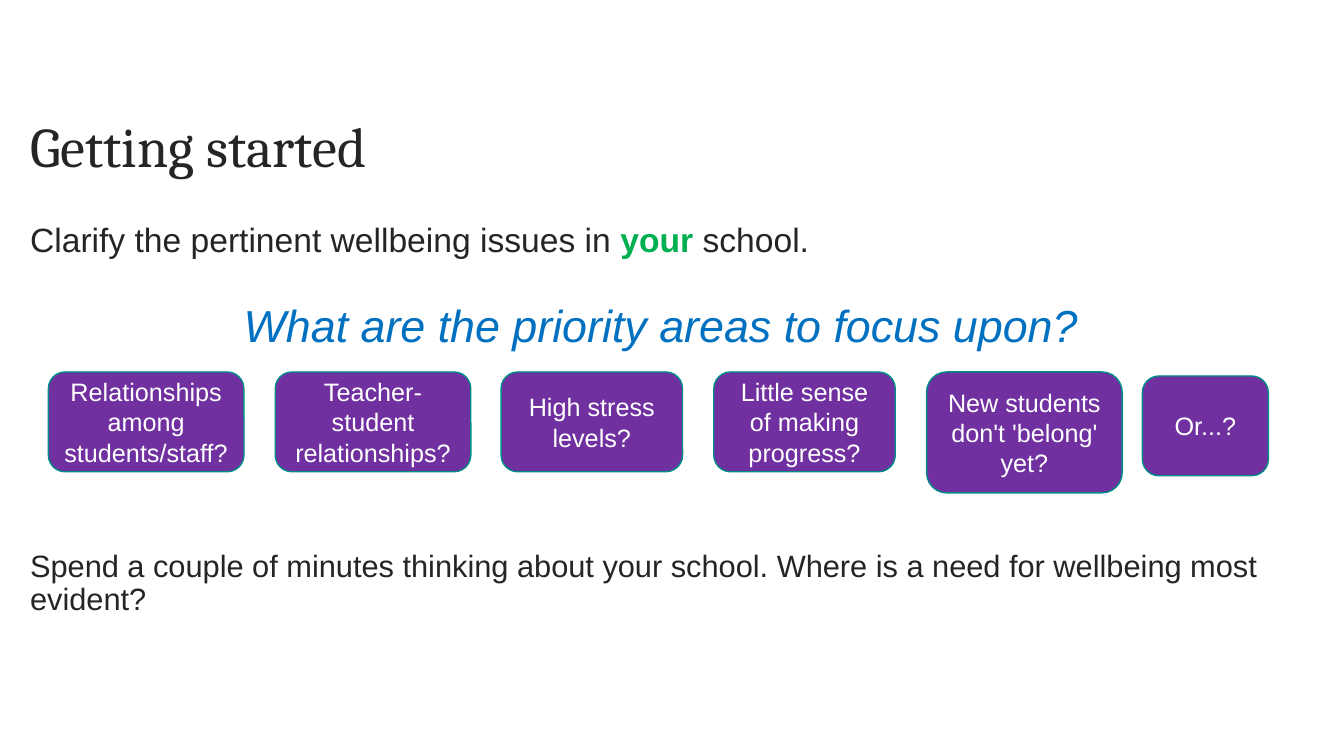
from pptx import Presentation
from pptx.dml.color import RGBColor
from pptx.enum.shapes import MSO_SHAPE
from pptx.enum.text import MSO_ANCHOR, PP_ALIGN
from pptx.util import Inches, Pt


def color(value):
    return RGBColor.from_string(value)


def set_font(font, size, value, name="Arial"):
    font.name = name
    font.size = Pt(size)
    font.color.rgb = color(value)


presentation = Presentation()
presentation.slide_width = Inches(13.33)
presentation.slide_height = Inches(7.5)
slide = presentation.slides.add_slide(presentation.slide_layouts[5])

# Title
title = slide.shapes.title
title.left, title.top = Inches(0.2), Inches(1.09)
title.width, title.height = Inches(12.72), Inches(0.79)
title.text_frame.text = "Getting started"
title.text_frame.vertical_anchor = MSO_ANCHOR.MIDDLE
paragraph = title.text_frame.paragraphs[0]
paragraph.alignment = PP_ALIGN.LEFT
paragraph.line_spacing = 0.9
set_font(paragraph.font, 40, "252525", "Cambria")

# Body text
body = slide.shapes.add_textbox(Inches(0.2), Inches(2.17), Inches(12.72), Inches(5.27))
frame = body.text_frame
frame.word_wrap = True

issues = frame.paragraphs[0]
issues.line_spacing = 0.9
set_font(issues.font, 24, "252525")
issues.add_run().text = "Clarify the pertinent wellbeing issues in "
emphasis = issues.add_run()
emphasis.text = "your"
emphasis.font.bold = True
emphasis.font.color.rgb = color("00B050")
issues.add_run().text = " school."

question = frame.add_paragraph()
question.text = "What are the priority areas to focus upon?"
question.alignment = PP_ALIGN.CENTER
question.line_spacing = 0.9
question.space_before = Pt(31)
set_font(question.font, 32, "0070C0")
question.font.italic = True

task = frame.add_paragraph()
task.text = (
    "Spend a couple of minutes thinking about your school. "
    "Where is a need for wellbeing most evident?"
)
task.line_spacing = 0.9
task.space_before = Pt(142)
set_font(task.font, 22, "252525")

# Priority areas: text, left, top, width, height
areas = [
    ("Relationships among students/staff?", 0.48, 3.69, 1.94, 0.99),
    ("Teacher-student relationships?", 2.73, 3.69, 1.94, 0.99),
    ("High stress levels?", 4.97, 3.69, 1.8, 0.99),
    ("Little sense of making progress?", 7.08, 3.69, 1.8, 0.99),
    ("New students don't 'belong' yet?", 9.19, 3.69, 1.94, 1.2),
    ("Or...?", 11.33, 3.73, 1.25, 0.99),
]
for text, *box in areas:
    shape = slide.shapes.add_shape(
        MSO_SHAPE.ROUNDED_RECTANGLE, *[Inches(length) for length in box]
    )
    shape.shadow.inherit = False
    shape.fill.solid()
    shape.fill.fore_color.rgb = color("7030A0")
    shape.line.color.rgb = color("008C87")
    shape.line.width = Pt(1)
    shape.text_frame.word_wrap = True
    shape.text_frame.vertical_anchor = MSO_ANCHOR.MIDDLE
    shape.text_frame.text = text
    paragraph = shape.text_frame.paragraphs[0]
    paragraph.alignment = PP_ALIGN.CENTER
    set_font(paragraph.font, 18, "FFFFFF")

presentation.save("out.pptx")
